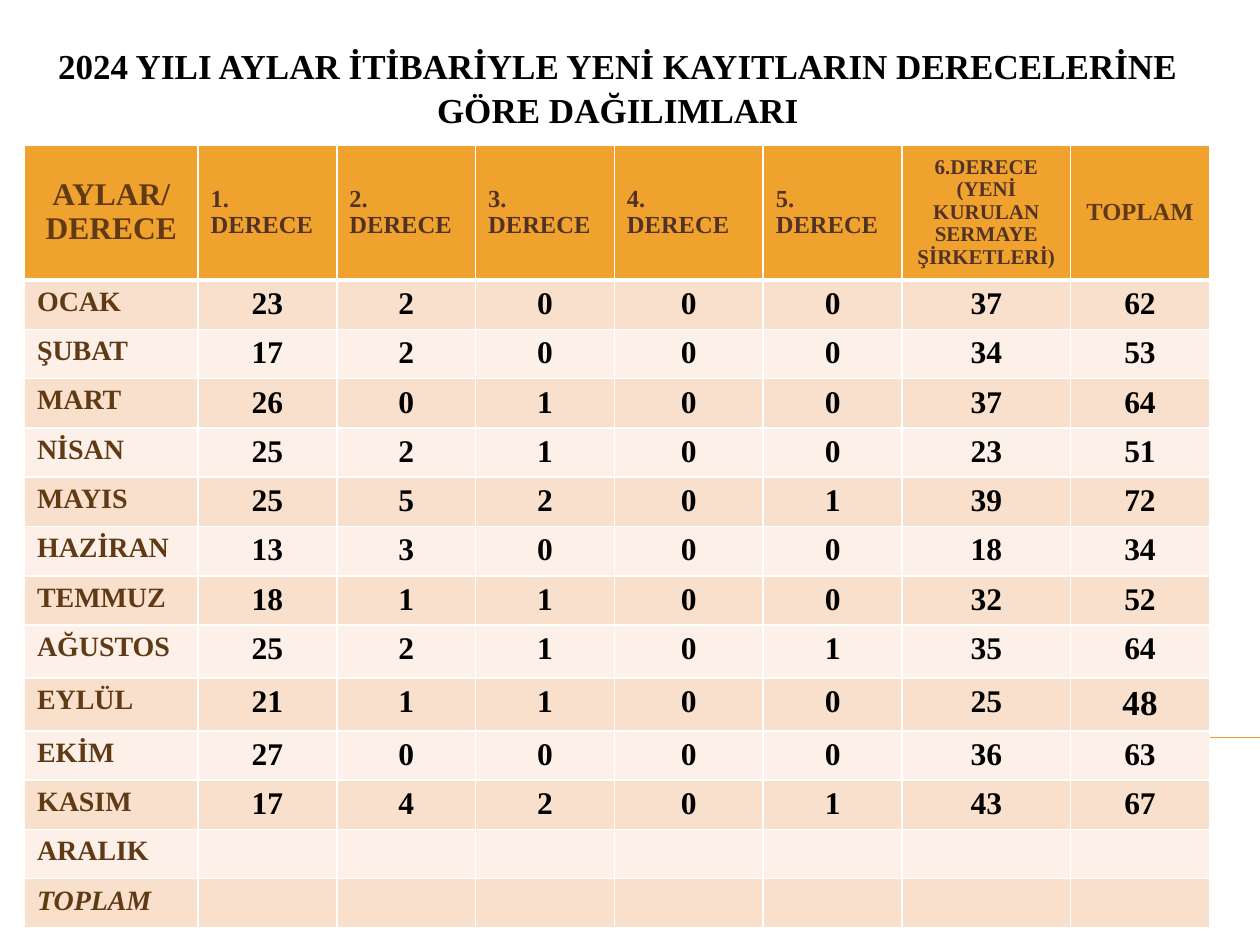
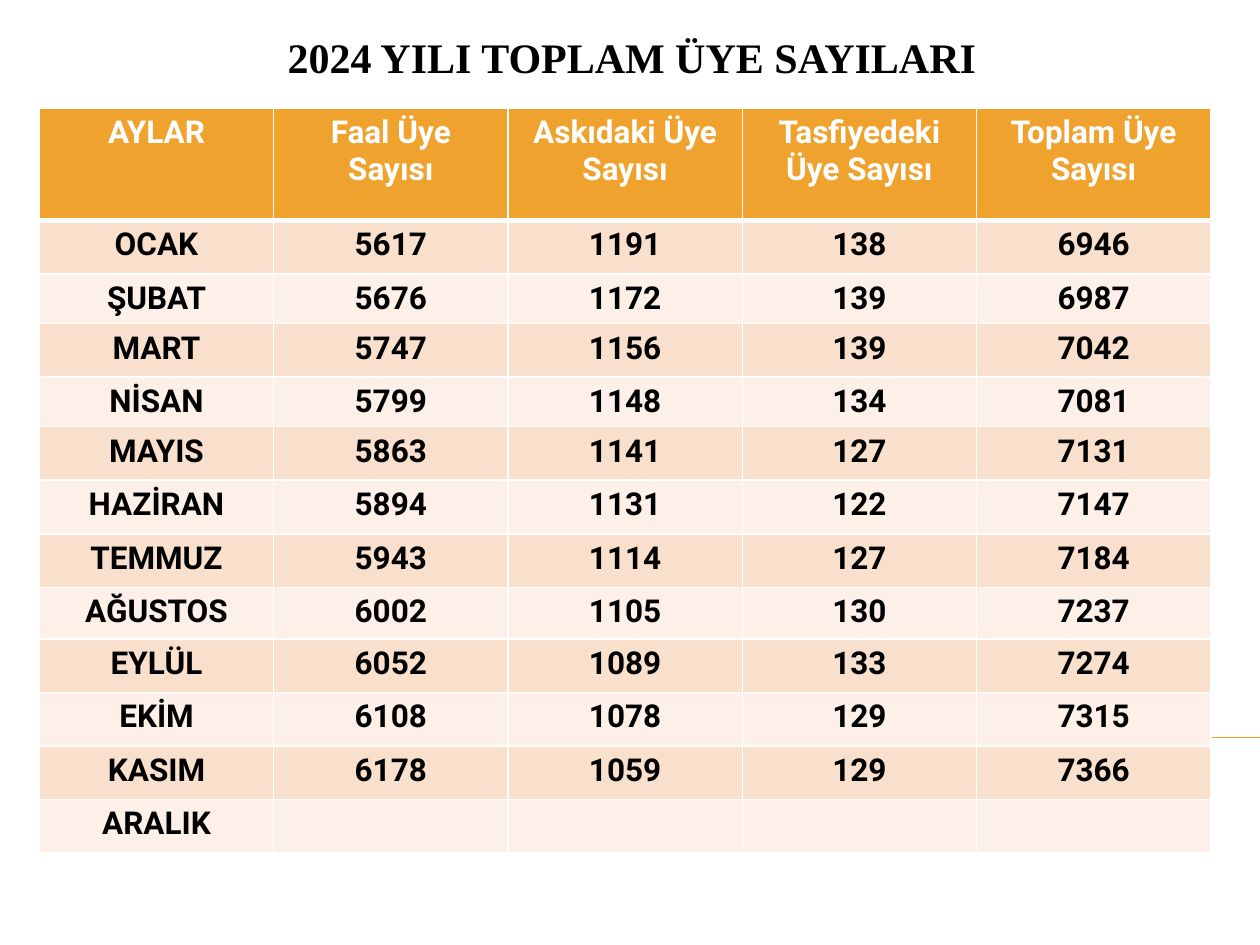
from dataclasses import dataclass, field

from lxml import etree
from pptx import Presentation
from pptx.dml.color import RGBColor
from pptx.enum.shapes import MSO_CONNECTOR
from pptx.enum.text import MSO_ANCHOR, MSO_AUTO_SIZE, PP_ALIGN
from pptx.oxml.ns import qn
from pptx.util import Pt

LEFT, CENTER = PP_ALIGN.LEFT, PP_ALIGN.CENTER
TOP, MIDDLE, BOTTOM = MSO_ANCHOR.TOP, MSO_ANCHOR.MIDDLE, MSO_ANCHOR.BOTTOM
STRAIGHT = MSO_CONNECTOR.STRAIGHT
NO_AUTOFIT = MSO_AUTO_SIZE.NONE
TITLE_ONLY = 5


# Theme: every colour, font and type size
@dataclass(frozen=True)
class Theme:
    accent: str = "F0A22E"
    bands: tuple[str, str] = ("F9E0CD", "FCF0E8")
    white: str = "FFFFFF"
    black: str = "000000"
    brown: str = "603A14"
    dark_brown: str = "523227"
    serif: str = "Times New Roman"
    sans: str = "Roboto"
    small: int = 12
    header: int = 14
    label: int = 16
    body: int = 18
    large: int = 20
    heading: int = 24


T = Theme()


@dataclass(frozen=True)
class Style:
    size: int = T.body
    color: str = T.black
    font: str = T.serif
    align: PP_ALIGN = CENTER
    anchor: MSO_ANCHOR = TOP
    spacing: float = 1.0
    italic: bool = False


@dataclass(frozen=True)
class Title:
    text: str
    box: tuple[float, float, float, float]
    style: Style


@dataclass(frozen=True)
class Grid:
    left: float
    top: float
    widths: list[float]
    heights: list[float]
    rows: list[list[str]]
    header_styles: list[Style]
    label_style: Style
    value_style: Style
    special: dict[tuple[int, int], Style] = field(default_factory=dict)

    def style_at(self, row: int, col: int) -> Style:
        if row == 0:
            return self.header_styles[col]
        usual = self.value_style if col else self.label_style
        return self.special.get((row, col), usual)


# Content
MONTHS = ["OCAK", "ŞUBAT", "MART", "NİSAN", "MAYIS", "HAZİRAN", "TEMMUZ",
          "AĞUSTOS", "EYLÜL", "EKİM", "KASIM", "ARALIK"]

DEGREE_HEADERS = ["AYLAR/ DERECE", *(f"{n}. DERECE" for n in range(1, 6)),
                  "6.DERECE (YENİ KURULAN SERMAYE ŞİRKETLERİ)", "TOPLAM"]
DEGREE_COUNTS = [
    (23, 2, 0, 0, 0, 37, 62),
    (17, 2, 0, 0, 0, 34, 53),
    (26, 0, 1, 0, 0, 37, 64),
    (25, 2, 1, 0, 0, 23, 51),
    (25, 5, 2, 0, 1, 39, 72),
    (13, 3, 0, 0, 0, 18, 34),
    (18, 1, 1, 0, 0, 32, 52),
    (25, 2, 1, 0, 1, 35, 64),
    (21, 1, 1, 0, 0, 25, 48),
    (27, 0, 0, 0, 0, 36, 63),
    (17, 4, 2, 0, 1, 43, 67),
]

MEMBER_HEADERS = ["AYLAR", "Faal Üye Sayısı", "Askıdaki Üye Sayısı",
                  "Tasfiyedeki Üye Sayısı", "Toplam Üye Sayısı"]
MEMBER_COUNTS = [
    (5617, 1191, 138, 6946),
    (5676, 1172, 139, 6987),
    (5747, 1156, 139, 7042),
    (5799, 1148, 134, 7081),
    (5863, 1141, 127, 7131),
    (5894, 1131, 122, 7147),
    (5943, 1114, 127, 7184),
    (6002, 1105, 130, 7237),
    (6052, 1089, 133, 7274),
    (6108, 1078, 129, 7315),
    (6178, 1059, 129, 7366),
]


def build_rows(headers: list[str], labels: list[str], counts: list[tuple]) -> list[list[str]]:
    """Join headers, row labels and counts; rows without counts stay empty."""
    blank = ("",) * (len(headers) - 1)
    padded = counts + [blank] * (len(labels) - len(counts))
    return [headers] + [[label, *map(str, row)] for label, row in zip(labels, padded)]


def head_style(size: int, color: str, align: PP_ALIGN = CENTER) -> Style:
    return Style(size, color, align=align, anchor=MIDDLE, spacing=0.96)


# Drawing
def set_all(target: object, values: dict) -> None:
    for name, value in values.items():
        setattr(target, name, value)


def write(tf, text: str, style: Style) -> None:
    p = tf.paragraphs[0]
    set_all(p, {"alignment": style.align, "line_spacing": style.spacing,
                "space_before": Pt(0)})
    if not text:
        # An empty cell still needs a type size, or it stretches its row
        etree.SubElement(p._p, qn("a:endParaRPr"), sz=str(T.label * 100))
        return
    r = p.add_run()
    r.text = text
    set_all(r.font, {"name": style.font, "size": Pt(style.size), "bold": True,
                     "italic": style.italic})
    r.font.color.rgb = RGBColor.from_string(style.color)


def add_title(s, title: Title) -> None:
    sp = s.shapes.title
    set_all(sp, dict(zip(("left", "top", "width", "height"), map(Pt, title.box))))
    tf = sp.text_frame
    set_all(tf, {"word_wrap": True, "auto_size": NO_AUTOFIT,
                 "vertical_anchor": title.style.anchor})
    write(tf, title.text, title.style)


def add_rule(s) -> None:
    line = s.shapes.add_connector(STRAIGHT, Pt(40.3), Pt(421.3), Pt(720), Pt(421.3))
    line.line.color.rgb = RGBColor.from_string(T.accent)
    line.line.width = Pt(0.75)
    etree.SubElement(line._element.spPr, qn("a:effectLst"))


def add_borders(cell, bottom: float) -> None:
    tc_pr = cell._tc.get_or_add_tcPr()
    for side, width in {"L": 1, "R": 1, "T": 1, "B": bottom}.items():
        ln = etree.SubElement(tc_pr, qn(f"a:ln{side}"), w=str(Pt(width)))
        fill = etree.SubElement(ln, qn("a:solidFill"))
        etree.SubElement(fill, qn("a:srgbClr"), val=T.white)


def add_grid(s, grid: Grid) -> None:
    frame = s.shapes.add_table(len(grid.heights), len(grid.widths), Pt(grid.left),
                               Pt(grid.top), Pt(sum(grid.widths)), Pt(sum(grid.heights)))
    table = frame.table
    table.horz_banding = False
    for column, width in zip(table.columns, grid.widths):
        column.width = Pt(width)
    for i, (height, texts) in enumerate(zip(grid.heights, grid.rows)):
        table.rows[i].height = Pt(height)
        color = T.bands[(i - 1) % 2] if i else T.accent
        for j, text in enumerate(texts):
            cell = table.cell(i, j)
            style = grid.style_at(i, j)
            # The header has a heavy lower edge, shared with the first row
            add_borders(cell, bottom=1 if i else 3)
            if i == 1:
                cell._tc.tcPr.find(qn("a:lnT")).set("w", str(Pt(3)))
            cell.fill.solid()
            cell.fill.fore_color.rgb = RGBColor.from_string(color)
            cell.vertical_anchor = style.anchor
            write(cell.text_frame, text, style)


def add_table_slide(prs, title: Title, grid: Grid) -> None:
    s = prs.slides.add_slide(prs.slide_layouts[TITLE_ONLY])
    add_rule(s)
    add_title(s, title)
    add_grid(s, grid)


def main() -> None:
    prs = Presentation()
    prs.slide_width, prs.slide_height = Pt(720), Pt(540)

    # New registrations by degree
    degree_label = Style(T.label, T.brown, align=LEFT)
    add_table_slide(
        prs,
        Title("2024 YILI AYLAR İTİBARİYLE YENİ KAYITLARIN DERECELERİNE GÖRE DAĞILIMLARI",
              (20, 21, 666, 45.5), Style(T.large, spacing=1.04)),
        Grid(
            left=14, top=83,
            widths=[99.2, 79.3, 79.3, 79.3, 85.1, 79.3, 96.4, 79.3],
            heights=[77] + [28.2] * 7 + [30.2] * 2 + [28.2] * 4,
            rows=build_rows(DEGREE_HEADERS, MONTHS + ["TOPLAM"], DEGREE_COUNTS),
            header_styles=[head_style(T.body, T.brown),
                           *[head_style(T.header, T.dark_brown, LEFT)] * 5,
                           head_style(T.small, T.dark_brown),
                           head_style(T.header, T.brown)],
            label_style=degree_label,
            value_style=Style(),
            special={(9, 7): Style(T.large),
                     (13, 0): Style(T.label, T.brown, align=LEFT, italic=True)},
        ),
    )

    # Total members
    member_style = Style(font=T.sans)
    add_table_slide(
        prs,
        Title("2024 YILI TOPLAM ÜYE SAYILARI", (28, 16.5, 666, 34),
              Style(T.heading, anchor=BOTTOM)),
        Grid(
            left=22.5, top=62,
            widths=[133.9] * 5,
            heights=[64, 30.6, 28.3, 30.6, 28.3] + [30.6] * 3 + [29.5] + [30.6] * 4,
            rows=build_rows(MEMBER_HEADERS, MONTHS, MEMBER_COUNTS),
            header_styles=[Style(color=T.white, font=T.sans)] * 5,
            label_style=member_style,
            value_style=member_style,
        ),
    )
    prs.save("out.pptx")


if __name__ == "__main__":
    main()
